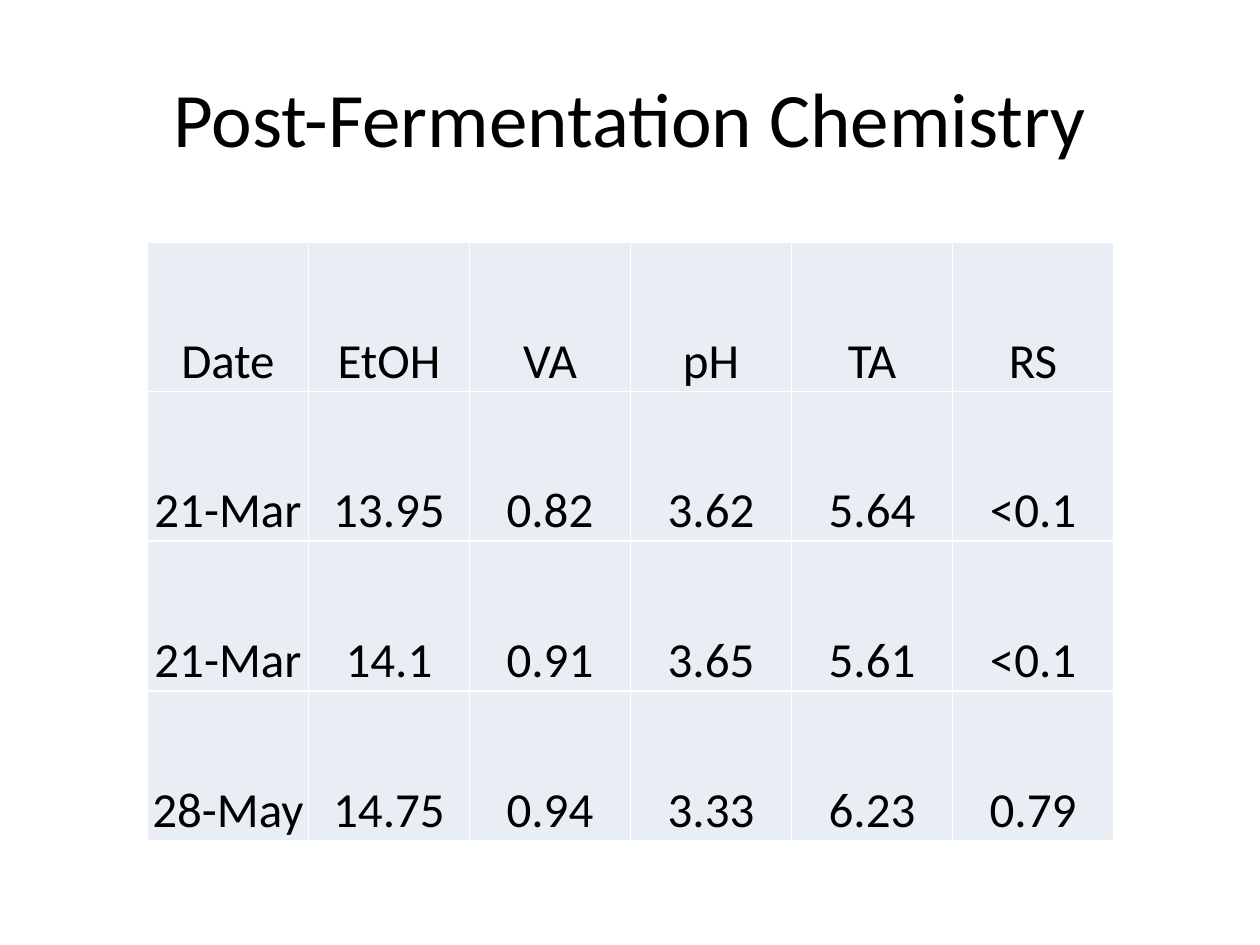
from lxml.etree import SubElement
from pptx import Presentation
from pptx.dml.color import RGBColor
from pptx.enum.text import MSO_ANCHOR, PP_ALIGN
from pptx.oxml.ns import qn
from pptx.util import Inches, Pt

BLACK = RGBColor(0x00, 0x00, 0x00)
WHITE = RGBColor(0xFF, 0xFF, 0xFF)
PALE_BLUE = RGBColor(0xE9, 0xED, 0xF4)
FONT = "Calibri"

CHEMISTRY = [
    ["Date", "EtOH", "VA", "pH", "TA", "RS"],
    ["21-Mar", "13.95", "0.82", "3.62", "5.64", "<0.1"],
    ["21-Mar", "14.1", "0.91", "3.65", "5.61", "<0.1"],
    ["28-May", "14.75", "0.94", "3.33", "6.23", "0.79"],
]


def format_paragraph(paragraph, size):
    paragraph.alignment = PP_ALIGN.CENTER
    paragraph.font.name = FONT
    paragraph.font.size = Pt(size)
    paragraph.font.color.rgb = BLACK


def add_borders(cell, color, width):
    """Draw all four borders; call before filling, as the schema puts lines first."""
    properties = cell._tc.get_or_add_tcPr()
    for side in ("a:lnL", "a:lnR", "a:lnT", "a:lnB"):
        line = SubElement(properties, qn(side), w=str(Pt(width)))
        fill = SubElement(line, qn("a:solidFill"))
        SubElement(fill, qn("a:srgbClr"), val=str(color))


def place_title(slide, text, left, top, width, height):
    title = slide.shapes.title
    title.left, title.top, title.width, title.height = left, top, width, height
    title.text_frame.text = text
    title.text_frame.vertical_anchor = MSO_ANCHOR.MIDDLE
    format_paragraph(title.text_frame.paragraphs[0], 44)


def format_cell(cell, text):
    cell.text = text
    cell.vertical_anchor = MSO_ANCHOR.BOTTOM
    cell.margin_left = cell.margin_top = cell.margin_right = Inches(0.01)
    cell.margin_bottom = 0
    format_paragraph(cell.text_frame.paragraphs[0], 28)
    add_borders(cell, WHITE, 1)
    cell.fill.solid()
    cell.fill.fore_color.rgb = PALE_BLUE


def add_chemistry_table(slide, rows, left, top, width, height):
    table = slide.shapes.add_table(
        len(rows), len(rows[0]), left, top, width, height
    ).table
    table.first_row = False
    table.horz_banding = False
    for row_index, row in enumerate(rows):
        for column_index, text in enumerate(row):
            format_cell(table.cell(row_index, column_index), text)


def main():
    presentation = Presentation()
    presentation.slide_width = Inches(10)
    presentation.slide_height = Inches(7.5)
    slide = presentation.slides.add_slide(presentation.slide_layouts[5])
    place_title(slide, "Post-Fermentation Chemistry",
                Inches(0.5), Inches(0.3), Inches(9), Inches(1.25))
    add_chemistry_table(slide, CHEMISTRY,
                        Inches(1.17), Inches(1.92), Inches(7.67), Inches(4.75))
    presentation.save("out.pptx")


if __name__ == "__main__":
    main()
